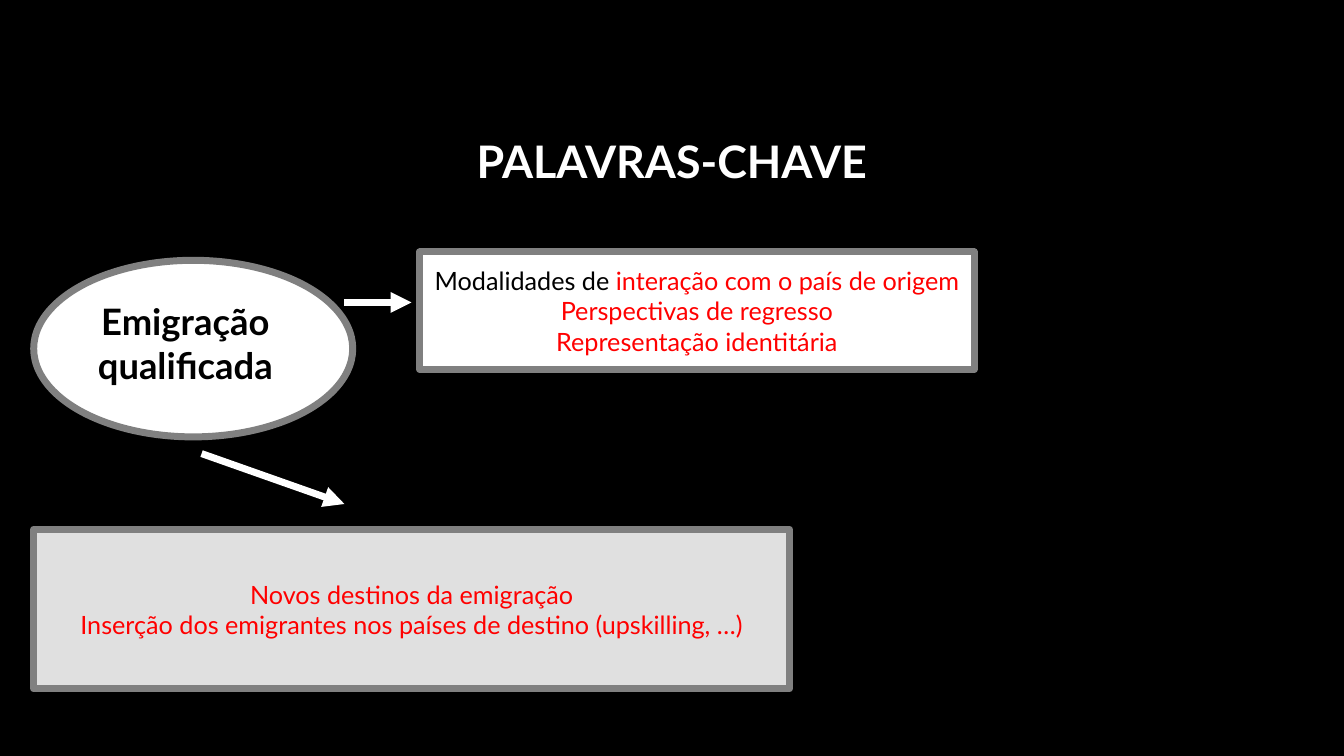
from lxml import etree
from pptx import Presentation
from pptx.dml.color import RGBColor
from pptx.enum.shapes import MSO_CONNECTOR as Connector, MSO_SHAPE as Shape
from pptx.enum.text import MSO_ANCHOR as Anchor, PP_ALIGN as Align
from pptx.oxml.ns import qn
from pptx.util import Cm, Pt

FONT = "Lato"
BLACK, WHITE, RED = "000000", "FFFFFF", "FF0000"
GREY, PALE_GREY = "808080", "E0E0E0"
SLIDE_WIDTH, SLIDE_HEIGHT = 33.87, 19.05
LEFT_EDGE = 0.85
LINE_WIDTH = Pt(5)


def colour(hex_code):
    return RGBColor.from_string(hex_code)


def style(paragraph, size, hex_code, bold=False):
    paragraph.alignment = Align.CENTER
    font = paragraph.font
    font.name, font.size, font.bold = FONT, Pt(size), bold
    font.color.rgb = colour(hex_code)


def place(shape, left, top, width, height):
    shape.left, shape.top = Cm(left), Cm(top)
    shape.width, shape.height = Cm(width), Cm(height)


def add_title(slide, text):
    title = slide.shapes.title
    place(title, 0, 1.7, SLIDE_WIDTH, 3.18)
    frame = title.text_frame
    frame.text = text
    frame.vertical_anchor = Anchor.BOTTOM
    style(frame.paragraphs[0], 32, WHITE, bold=True)
    frame.paragraphs[0].line_spacing = 0.9


def add_outlined(slide, kind, box, fill):
    shape = slide.shapes.add_shape(kind, *map(Cm, box))
    shape.shadow.inherit = False
    shape.fill.solid()
    shape.fill.fore_color.rgb = colour(fill)
    shape.line.color.rgb = colour(GREY)
    shape.line.width = LINE_WIDTH
    return shape


def add_theme_label(slide, text, box):
    frame = slide.shapes.add_textbox(*map(Cm, box)).text_frame
    frame.word_wrap = True
    frame.text = text
    style(frame.paragraphs[0], 26, BLACK, bold=True)


def add_keywords(slide, box, fill, lines):
    """Each line is a list of (text, colour) pieces."""
    frame = add_outlined(slide, Shape.RECTANGLE, box, fill).text_frame
    frame.word_wrap = False
    frame.vertical_anchor = Anchor.MIDDLE
    for index, pieces in enumerate(lines):
        paragraph = frame.add_paragraph() if index else frame.paragraphs[0]
        style(paragraph, 18, RED)
        for text, hex_code in pieces:
            run = paragraph.add_run()
            run.text = text
            if hex_code != RED:
                run.font.color.rgb = colour(hex_code)


def add_arrow(slide, start, end):
    arrow = slide.shapes.add_connector(Connector.STRAIGHT, *map(Cm, start + end))
    arrow.line.color.rgb = colour(WHITE)
    arrow.line.width = LINE_WIDTH
    properties = arrow.element.spPr
    outline = properties.find(qn("a:ln"))
    etree.SubElement(outline, qn("a:tailEnd"), type="triangle")
    etree.SubElement(properties, qn("a:effectLst"))


def main():
    deck = Presentation()
    deck.slide_width, deck.slide_height = Cm(SLIDE_WIDTH), Cm(SLIDE_HEIGHT)
    slide = deck.slides.add_slide(deck.slide_layouts[5])
    background = slide.background.fill
    background.solid()
    background.fore_color.rgb = colour(BLACK)

    add_title(slide, "PALAVRAS-CHAVE")

    # Central theme
    add_outlined(slide, Shape.OVAL, (LEFT_EDGE, 6.56, 8.04, 4.45), WHITE)
    add_theme_label(slide, "Emigração qualificada", (LEFT_EDGE, 7.41, 7.65, 2.49))

    # Ties with the country of origin
    add_keywords(slide, (10.58, 6.35, 13.97, 2.96), WHITE, [
        [("Modalidades de ", BLACK), ("interação com o país de origem", RED)],
        [("Perspectivas de regresso", RED)],
        [("Representação identitária", RED)],
    ])
    add_arrow(slide, (8.68, 7.62), (10.37, 7.62))

    # Destinations
    add_keywords(slide, (LEFT_EDGE, 13.34, 19.05, 4.02), PALE_GREY, [
        [("Novos destinos da emigração", RED)],
        [("Inserção dos emigrantes nos países de destino (upskilling, …)", RED)],
    ])
    add_arrow(slide, (5.08, 11.43), (8.68, 12.7))

    deck.save("out.pptx")


if __name__ == "__main__":
    main()
